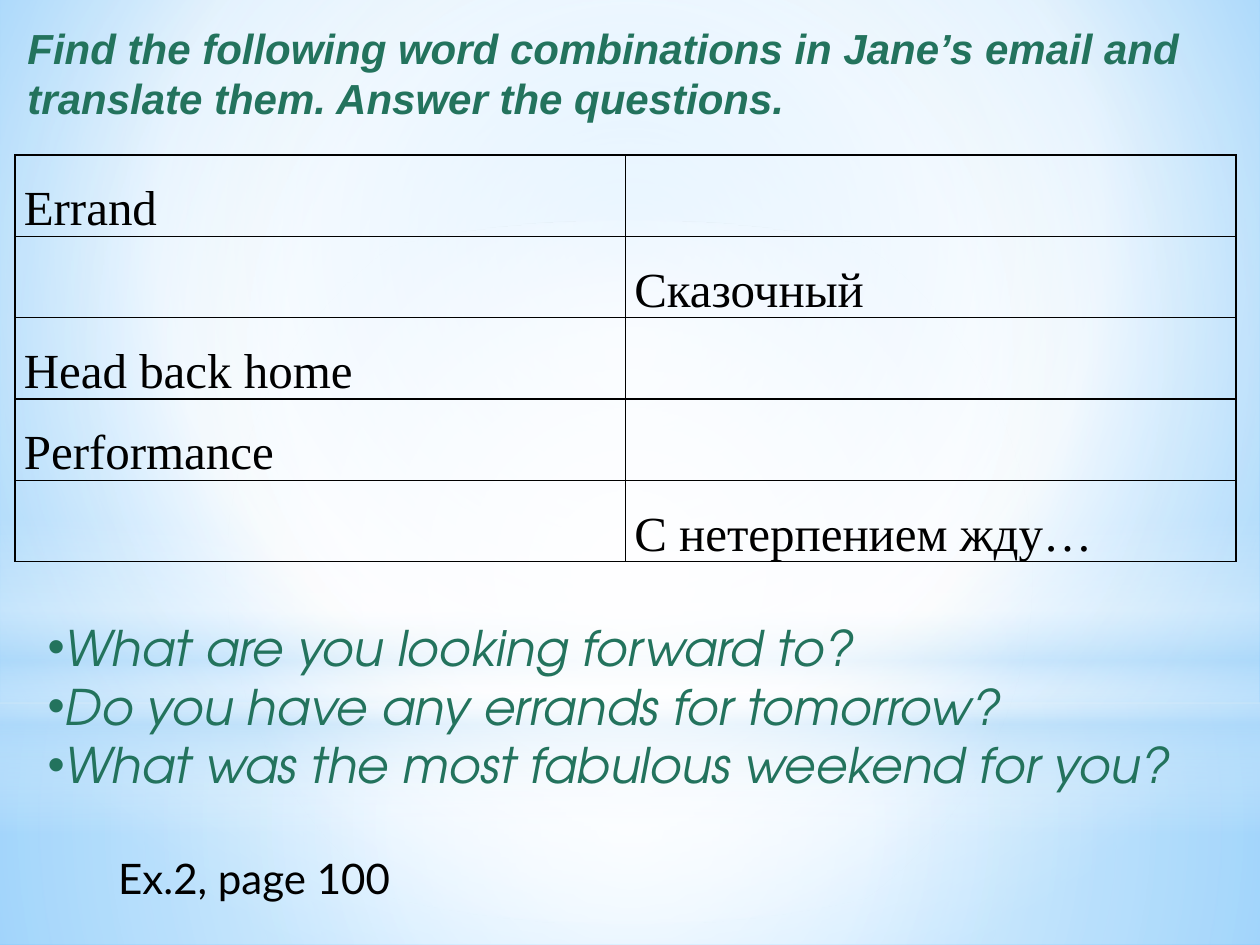
from lxml.etree import SubElement as Sub
from pptx import Presentation
from pptx.dml.color import RGBColor as Rgb
from pptx.enum.shapes import MSO_SHAPE as Kind
from pptx.oxml.ns import qn
from pptx.util import Pt

HUE = {"ink": "000000", "green": "23735D", "white": "FFFFFF",
       "pale": "B4DCFA", "sky": "9ED5FF", "deep": "5BB9FF"}
MID = (50, 50, 50, 50)
BACK = ([(0, "sky", 100), (60, "white", 100), (100, "deep", 100)], (20, 10, 20, 60))
GLOWS = [
    (Kind.RECTANGLE, (0, 401.76, 720, 138.24),
     [(0, "white", 91), (37, "white", 76), (100, "pale", 79)], MID),
    (Kind.RECTANGLE, (0, 0, 720, 401.76),
     [(0, "white", 89), (48, "white", 62), (100, "pale", 79)], MID),
    (Kind.RECTANGLE, (0, 296.64, 720, 180),
     [(0, "white", 0), (29, "white", 30), (45, "pale", 40),
      (55, "white", 26), (65, "pale", 60), (100, "white", 0)], None),
    (Kind.OVAL, (0, 126, 720, 401.76), [(0, "white", 100), (56, "white", 0)], MID),
]
WORDS = [("Errand", ""), ("", "Сказочный"), ("Head back home", ""),
         ("Performance", ""), ("", "С нетерпением жду…")]
GRID = (8.64, 88.56, 697.68, 232.5)
CELL = {"name": "Times New Roman", "size": Pt(28)}
PAD = {"margin_left": Pt(5), "margin_right": Pt(5), "margin_top": 0, "margin_bottom": 0}
TEXTS = [
    ((20.16, 349.2, 668.16, 131), "green", True,
     {"name": "TeX Gyre Adventor", "size": Pt(28), "italic": True},
     ["What are you looking forward to?",
      "Do you have any errands for tomorrow?",
      "What was the most fabulous weekend for you?"]),
    ((8.64, 9.36, 702.72, 65.52), "green", False,
     {"name": "Arial", "size": Pt(24), "bold": True, "italic": True},
     ["Find the following word combinations in Jane’s email and translate them. "
      "Answer the questions."]),
    ((60.48, 483.84, 174.96, 36), "ink", False,
     {"name": "Lato", "size": Pt(24)}, ["Ex.2, page 100"]),
]


def place(box):
    return [Pt(n) for n in box]


def apply(item, look):
    for key, val in look.items():
        setattr(item, key, val)


def style(para, look, hue):
    apply(para.font, look)
    para.font.color.rgb = Rgb.from_string(HUE[hue])


def blend(fill, host, stops, focus):
    fill.gradient()
    grad = host.find(qn("a:gradFill"))
    for kid in list(grad):
        grad.remove(kid)
    band = Sub(grad, qn("a:gsLst"))
    for pos, hue, alpha in stops:
        stop = Sub(band, qn("a:gs"), pos=str(pos * 1000))
        tone = Sub(stop, qn("a:srgbClr"), val=HUE[hue])
        if alpha < 100:
            Sub(tone, qn("a:alpha"), val=str(alpha * 1000))
    if focus:
        ring = Sub(grad, qn("a:path"), {"path": "circle"})
        Sub(ring, qn("a:fillToRect"),
            {side: str(n * 1000) for side, n in zip("ltrb", focus)})
    else:
        Sub(grad, qn("a:lin"), ang="5400000", scaled="0")


def edge(cell):
    props = cell._tc.get_or_add_tcPr()
    for spot, side in enumerate("LRTB"):
        line = Sub(props, qn("a:ln" + side), w=str(Pt(1)))
        Sub(Sub(line, qn("a:solidFill")), qn("a:srgbClr"), val=HUE["ink"])
        props.insert(spot, line)


deck = Presentation()
deck.slide_width, deck.slide_height = Pt(720), Pt(540)
slide = deck.slides.add_slide(deck.slide_layouts[6])
shapes = slide.shapes

fill = slide.background.fill
fill.gradient()
blend(fill, slide.element.find(".//" + qn("p:bgPr")), *BACK)

for kind, box, stops, focus in GLOWS:
    glow = shapes.add_shape(kind, *place(box))
    glow.shadow.inherit = False
    glow.line.fill.background()
    blend(glow.fill, glow.element.spPr, stops, focus)

table = shapes.add_table(len(WORDS), 2, *place(GRID)).table
apply(table, {"first_row": False, "horz_banding": False})
for r, row in enumerate(WORDS):
    table.rows[r].height = Pt(GRID[3] / len(WORDS))
    for c, word in enumerate(row):
        cell = table.cell(r, c)
        apply(cell, PAD)
        cell.fill.background()
        edge(cell)
        if word:
            cell.text = word
            para = cell.text_frame.paragraphs[0]
            para.line_spacing = 1.5
            style(para, CELL, "ink")

for box, hue, dots, look, lines in TEXTS:
    frame = shapes.add_textbox(*place(box)).text_frame
    frame.word_wrap = True
    frame.text = "\n".join(lines)
    for para in frame.paragraphs:
        if dots:
            props = para._p.get_or_add_pPr()
            Sub(props, qn("a:buFont"), typeface="Arial")
            Sub(props, qn("a:buChar"), char="•")
        style(para, look, hue)

deck.save("out.pptx")
